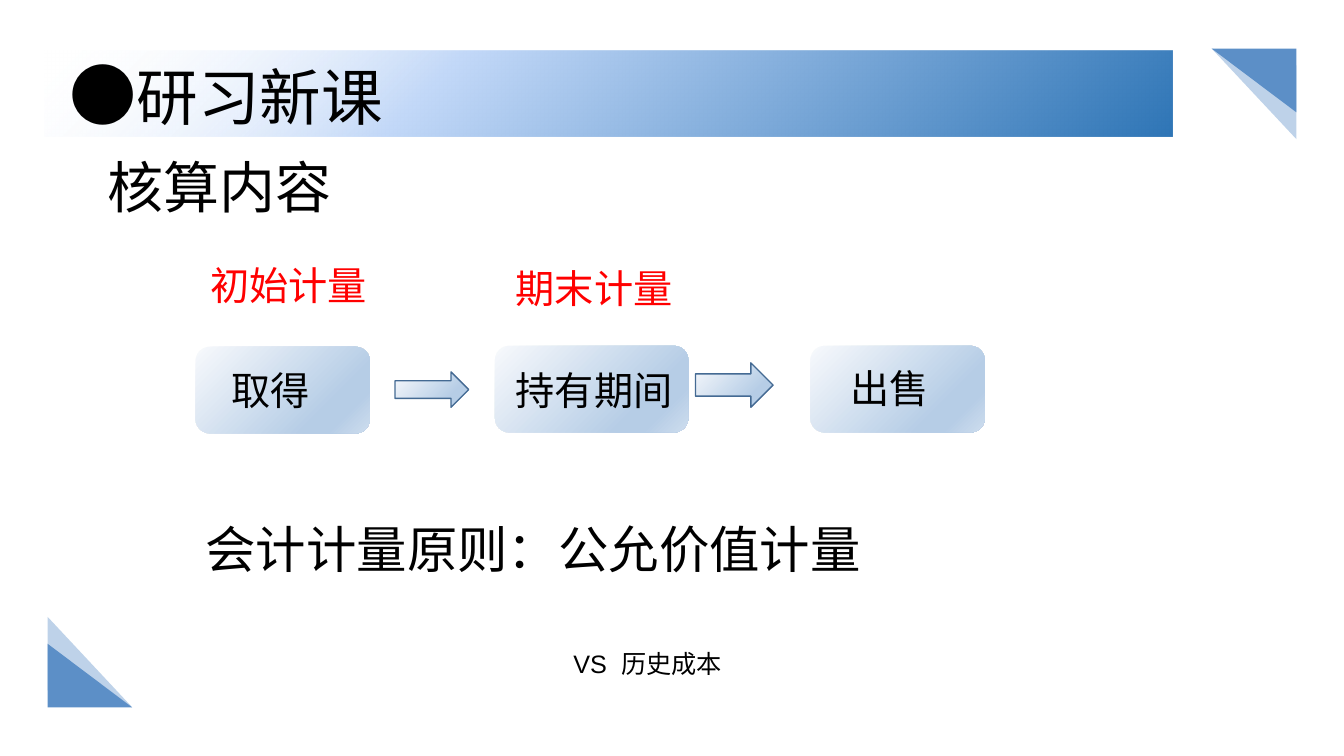
from lxml import etree
from pptx import Presentation
from pptx.dml.color import RGBColor
from pptx.enum.shapes import MSO_SHAPE
from pptx.enum.text import MSO_ANCHOR, PP_ALIGN
from pptx.oxml import parse_xml
from pptx.oxml.ns import nsdecls, qn
from pptx.util import Pt

RECTANGLE = MSO_SHAPE.RECTANGLE
STEP_BOX = MSO_SHAPE.FLOWCHART_ALTERNATE_PROCESS
RIGHT_ARROW = MSO_SHAPE.RIGHT_ARROW
MIDDLE = MSO_ANCHOR.MIDDLE
LEFT = PP_ALIGN.LEFT

BLACK = RGBColor(0x00, 0x00, 0x00)
RED = RGBColor(0xFF, 0x00, 0x00)
WHITE = RGBColor(0xFF, 0xFF, 0xFF)
LIGHT_BLUE = RGBColor(0xBE, 0xD2, 0xE9)
MID_BLUE = RGBColor(0x5C, 0x8F, 0xC7)
ARROW_LINE = RGBColor(0x44, 0x6A, 0x93)
PALE_BLUE = RGBColor(0xF7, 0xF9, 0xFC)
SOFT_BLUE = RGBColor(0xB6, 0xCD, 0xE6)
EDGE_BLUE = RGBColor(0xCE, 0xDD, 0xEE)
BANNER_BLUE = RGBColor(0x2E, 0x75, 0xB6)
BANNER_PALE = RGBColor(0xC2, 0xD8, 0xF8)

LATIN_FONT = "Arial"
CHINESE_FONT = "Noto Sans CJK SC"

SLIDE_WIDTH, SLIDE_HEIGHT = 960, 540

# Gradient stops: position in percent, colour, opacity in percent
STEP_STOPS = [(0, PALE_BLUE, 100), (74, SOFT_BLUE, 100),
              (83, SOFT_BLUE, 100), (100, EDGE_BLUE, 100)]
BANNER_STOPS = [(0, BANNER_BLUE, 100), (65, BANNER_PALE, 100), (100, WHITE, 0)]
DIAGONAL = '<a:lin ang="2700000" scaled="0"/>'
FROM_BOTTOM_RIGHT = '<a:path path="circle"><a:fillToRect l="100000" t="100000"/></a:path>'

# Top right corner; the bottom left one is its half turn about the slide centre
CORNER_TRIANGLES = [
    (LIGHT_BLUE, [(865.5, 34.7), (926, 46.8), (926, 99.4)]),
    (MID_BLUE, [(865.5, 34.7), (926, 34.7), (926, 80.2)]),
]

# Left, top, width, height
STEP_BOXES = [(139.7, 247.7, 124.6, 61.9), (353.5, 247, 138.2, 61.9), (578.9, 247, 124.6, 61.9)]
ARROWS = [(282.2, 265.7, 52.6, 25.2), (496.8, 259.2, 55.4, 31.7)]

# Text, left, top, width, height, size, colour
LABELS = [
    ("核算内容", 69.8, 105.1, 176.4, 55.4, 40, BLACK),
    ("取得", 158.4, 257.8, 100.8, 41, 28, BLACK),
    ("持有期间", 361.4, 257.8, 130.3, 41, 28, BLACK),
    ("出售", 600.5, 257, 103.7, 41, 28, BLACK),
    ("初始计量", 143.3, 182.9, 130.3, 41, 28, RED),
    ("期末计量", 361.4, 185, 130.3, 41, 28, RED),
    ("会计计量原则：公允价值计量", 139.7, 366.5, 491.8, 51.1, 36, BLACK),
    ("VS  历史成本", 402.5, 459.4, 143.3, 28.8, 18, BLACK),
]


def format_run(run, size, color, latin=LATIN_FONT):
    run.font.size = Pt(size)
    run.font.color.rgb = color
    run.font.name = latin
    east_asian = etree.SubElement(run._r.get_or_add_rPr(), qn("a:ea"))
    east_asian.set("typeface", CHINESE_FONT)


def fill_gradient(shape, stops, direction):
    """Give the shape a gradient; direction is the a:lin or a:path element."""
    stop_xml = "".join(
        f'<a:gs pos="{position * 1000}"><a:srgbClr val="{color}">'
        f'<a:alpha val="{opacity * 1000}"/></a:srgbClr></a:gs>'
        for position, color, opacity in stops)
    gradient = parse_xml(f'<a:gradFill {nsdecls("a")} rotWithShape="1">'
                         f'<a:gsLst>{stop_xml}</a:gsLst>{direction}</a:gradFill>')
    shape._element.spPr.find(qn("a:prstGeom")).addnext(gradient)


def add_gradient_shape(slide, kind, box, stops, direction, line_color=None):
    shape = slide.shapes.add_shape(kind, *map(Pt, box))
    shape.shadow.inherit = False
    fill_gradient(shape, stops, direction)
    if line_color is None:
        shape.line.fill.background()
    else:
        shape.line.color.rgb = line_color
        shape.line.width = Pt(1)
    return shape


def add_triangle(slide, points, color):
    start, *others = [(Pt(x), Pt(y)) for x, y in points]
    builder = slide.shapes.build_freeform(*start)
    builder.add_line_segments(others, close=True)
    triangle = builder.convert_to_shape()
    triangle.shadow.inherit = False
    triangle.fill.solid()
    triangle.fill.fore_color.rgb = color
    triangle.line.fill.background()


def add_corners(slide):
    for color, points in CORNER_TRIANGLES:
        add_triangle(slide, points, color)
        add_triangle(slide, [(SLIDE_WIDTH - x, SLIDE_HEIGHT - y) for x, y in points], color)


def add_banner(slide):
    banner = add_gradient_shape(slide, RECTANGLE, (31.7, 36, 805.7, 61.9),
                                BANNER_STOPS, FROM_BOTTOM_RIGHT)
    banner.text_frame.vertical_anchor = MIDDLE
    paragraph = banner.text_frame.paragraphs[0]
    paragraph.alignment = LEFT
    for text, size in [(" ●", 48), ("研习新课", 44)]:
        run = paragraph.add_run()
        run.text = text
        format_run(run, size, BLACK, CHINESE_FONT)


def add_label(slide, text, left, top, width, height, size, color):
    label = slide.shapes.add_textbox(Pt(left), Pt(top), Pt(width), Pt(height))
    label.text_frame.word_wrap = True
    label.text_frame.text = text
    format_run(label.text_frame.paragraphs[0].runs[0], size, color)


def main():
    presentation = Presentation()
    presentation.slide_width = Pt(SLIDE_WIDTH)
    presentation.slide_height = Pt(SLIDE_HEIGHT)
    slide = presentation.slides.add_slide(presentation.slide_layouts[6])
    add_corners(slide)
    add_banner(slide)
    for box in STEP_BOXES:
        add_gradient_shape(slide, STEP_BOX, box, STEP_STOPS, DIAGONAL)
    for box in ARROWS:
        add_gradient_shape(slide, RIGHT_ARROW, box, STEP_STOPS, DIAGONAL, ARROW_LINE)
    for label in LABELS:
        add_label(slide, *label)
    presentation.save("out.pptx")


if __name__ == "__main__":
    main()
